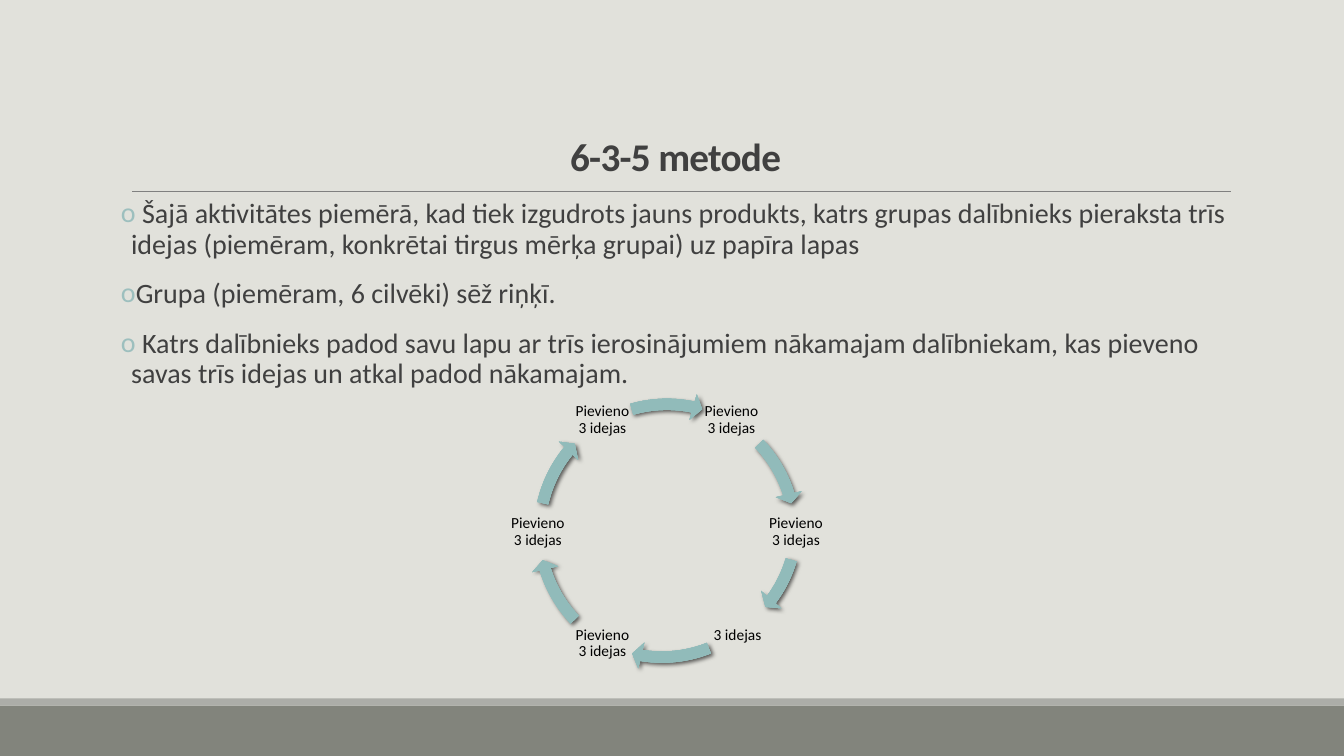
"""Builds the slide on the 6-3-5 method with its ring of ideas."""
from math import cos, radians, sin

from lxml.etree import SubElement
from pptx import Presentation
from pptx.dml.color import RGBColor
from pptx.enum.shapes import MSO_CONNECTOR, MSO_SHAPE
from pptx.enum.text import MSO_ANCHOR as Anchor, MSO_AUTO_SIZE as AutoSize, PP_ALIGN as Align
from pptx.oxml import parse_xml
from pptx.oxml.ns import nsdecls, qn
from pptx.util import Inches, Pt

FONT = "Calibri"
INK = "404040"
COLUMNS, ROWS = 133.3, 75
CENTER_COLUMN, CENTER_ROW, RADIUS = 66.15, 52.75, 12.8
LABEL_SIZE, ARROW_SIZE = 5.8, 27.9
BULLETS = [
    " Šajā aktivitātes piemērā, kad tiek izgudrots jauns produkts, katrs grupas dalībnieks "
    "pieraksta trīs idejas (piemēram, konkrētai tirgus mērķa grupai) uz papīra lapas",
    "Grupa (piemēram, 6 cilvēki) sēž riņķī.",
    " Katrs dalībnieks padod savu lapu ar trīs ierosinājumiem nākamajam dalībniekam, "
    "kas pieveno savas trīs idejas un atkal padod nākamajam.",
]
ADD_IDEAS = "Pievieno 3 idejas"
# Label, its column and row shift, arrow column and row, arrow start and end in degrees.
STEPS = [
    (ADD_IDEAS, 0, 0, 52.2, 38.8, 316.38, 342.89),
    (ADD_IDEAS, 0, 0, 52.4, 38, 16.52, 36.62),
    ("3 idejas", 0.6, -0.8, 51.7, 38.6, 68.39, 99.3),
    (ADD_IDEAS, 0, 0, 52.2, 38.8, 136.38, 162.89),
    (ADD_IDEAS, 0, 0, 52.2, 38.8, 192.94, 219.45),
    (ADD_IDEAS, 0, 0, 52.2, 38.8, 253.97, 281.86),
]
GRADIENT = [(0, "8EB7B6"), (34, "90B8B7"), (70, "91BBBA"), (100, "9BC1C0")]


def grid(*cells):
    """Turn columns and rows of a tenth of an inch into lengths."""
    return [Inches(cell / 10) for cell in cells]


def color(value):
    """Turn a hex string into a colour."""
    return RGBColor.from_string(value)


def place(shape, *cells):
    """Move and size a shape on the grid."""
    shape.left, shape.top, shape.width, shape.height = grid(*cells)


def set_frame(frame, anchor, sides, ends):
    """Set wrapping, anchor and insets of a text frame."""
    frame.word_wrap = True
    frame.auto_size = AutoSize.NONE
    frame.vertical_anchor = anchor
    frame.margin_left = frame.margin_right = Inches(sides)
    frame.margin_top = frame.margin_bottom = Inches(ends)


def add_run(paragraph, text, size, ink=INK, bold=False):
    """Add one formatted run."""
    run = paragraph.add_run()
    run.text = text
    run.font.name, run.font.size, run.font.bold = FONT, Pt(size), bold
    run.font.color.rgb = color(ink)
    return run


def add_band(slide, row, height, fill):
    """Add a band over the whole width."""
    band = slide.shapes.add_shape(MSO_SHAPE.RECTANGLE, *grid(0, row, COLUMNS, height))
    band.shadow.inherit = False
    band.fill.solid()
    band.fill.fore_color.rgb = color(fill)
    band.line.fill.background()


def add_rule(slide):
    """Add the thin line under the title."""
    rule = slide.shapes.add_connector(MSO_CONNECTOR.STRAIGHT, *grid(13.1, 19, 122.1, 19))
    rule.line.color.rgb = color("808080")
    rule.line.width = Pt(0.5)
    SubElement(rule._element.spPr, qn("a:effectLst"))


def fill_title(title):
    """Place and write the title."""
    place(title, 12, 9.1, 110, 9.2)
    set_frame(title.text_frame, Anchor.BOTTOM, 0.1, 0.05)
    paragraph = title.text_frame.paragraphs[0]
    paragraph.alignment = Align.CENTER
    paragraph.line_spacing = 0.85
    run = add_run(paragraph, "6-3-5 metode", 28, bold=True)
    run.font._element.set("spc", "-50")


def add_bullet(paragraph):
    """Give a paragraph its hanging round bullet."""
    properties = paragraph._p.get_or_add_pPr()
    properties.set("marL", str(Inches(0.1)))
    properties.set("indent", str(-Inches(0.1)))
    bullet_color = SubElement(properties, qn("a:buClr"))
    SubElement(bullet_color, qn("a:srgbClr"), val="9DBFBE")
    SubElement(properties, qn("a:buFont"), typeface=FONT)
    SubElement(properties, qn("a:buChar"), char="o")


def fill_body(body):
    """Place and write the bulleted list."""
    place(body, 12, 19.3, 110, 48.5)
    frame = body.text_frame
    set_frame(frame, Anchor.TOP, 0, 0.05)
    for index, text in enumerate(BULLETS):
        paragraph = frame.add_paragraph() if index else frame.paragraphs[0]
        add_bullet(paragraph)
        paragraph.line_spacing = 0.9
        paragraph.space_before = Pt(12 if index else 0)
        paragraph.space_after = Pt(2)
        add_run(paragraph, text, 20)


def add_label(group, text, column, row):
    """Add a ring label centred on a grid point."""
    half = LABEL_SIZE / 2
    label = group.shapes.add_textbox(*grid(column - half, row - half, LABEL_SIZE, LABEL_SIZE))
    set_frame(label.text_frame, Anchor.MIDDLE, 0, 0.02)
    paragraph = label.text_frame.paragraphs[0]
    paragraph.alignment = Align.CENTER
    paragraph.line_spacing = 0.9
    add_run(paragraph, text, 11, "000000")


def add_arrow(group, column, row, start, end):
    """Add a curved arrow with radial shading and a soft shadow."""
    arrow = group.shapes.add_shape(
        MSO_SHAPE.CIRCULAR_ARROW, *grid(column, row, ARROW_SIZE, ARROW_SIZE))
    for index, value in enumerate((0.04, 2.5, end * 0.6, start * 0.6, 0.047)):
        arrow.adjustments[index] = value
    arrow.line.fill.background()
    stops = "".join(f'<a:gs pos="{share * 1000}"><a:srgbClr val="{value}"/></a:gs>'
                    for share, value in GRADIENT)
    properties = arrow._element.spPr
    properties.find(qn("a:prstGeom")).addnext(parse_xml(
        f'<a:gradFill {nsdecls("a")} rotWithShape="1"><a:gsLst>{stops}</a:gsLst>'
        '<a:path path="circle"><a:fillToRect l="100000" t="100000" r="100000" b="100000"/>'
        '</a:path></a:gradFill>'))
    properties.append(parse_xml(
        f'<a:effectLst {nsdecls("a")}><a:outerShdw blurRad="{Pt(3)}" dist="{Pt(2)}" '
        'dir="2700000" rotWithShape="0"><a:srgbClr val="000000"><a:alpha val="60000"/>'
        '</a:srgbClr></a:outerShdw></a:effectLst>'))


def add_ring(slide):
    """Add six labels, sixty degrees apart, with the arrows between them."""
    group = slide.shapes.add_group_shape()
    for index, (text, shift_x, shift_y, column, row, start, end) in enumerate(STEPS):
        angle = radians(60 * (index - 1))
        add_label(group, text, CENTER_COLUMN + RADIUS * cos(angle) + shift_x,
                  CENTER_ROW + RADIUS * sin(angle) + shift_y)
        add_arrow(group, column, row, start, end)


def main():
    """Build and save the presentation."""
    presentation = Presentation()
    presentation.slide_width, presentation.slide_height = grid(COLUMNS, ROWS)
    slide = presentation.slides.add_slide(presentation.slide_layouts[1])
    slide.background.fill.solid()
    slide.background.fill.fore_color.rgb = color("E1E1DB")
    add_band(slide, 70, 5, "82847C")
    add_band(slide, 69.3, 0.7, "ACADA8")
    add_rule(slide)
    fill_title(slide.shapes.title)
    fill_body(slide.placeholders[1])
    add_ring(slide)
    presentation.save("out.pptx")


if __name__ == "__main__":
    main()
